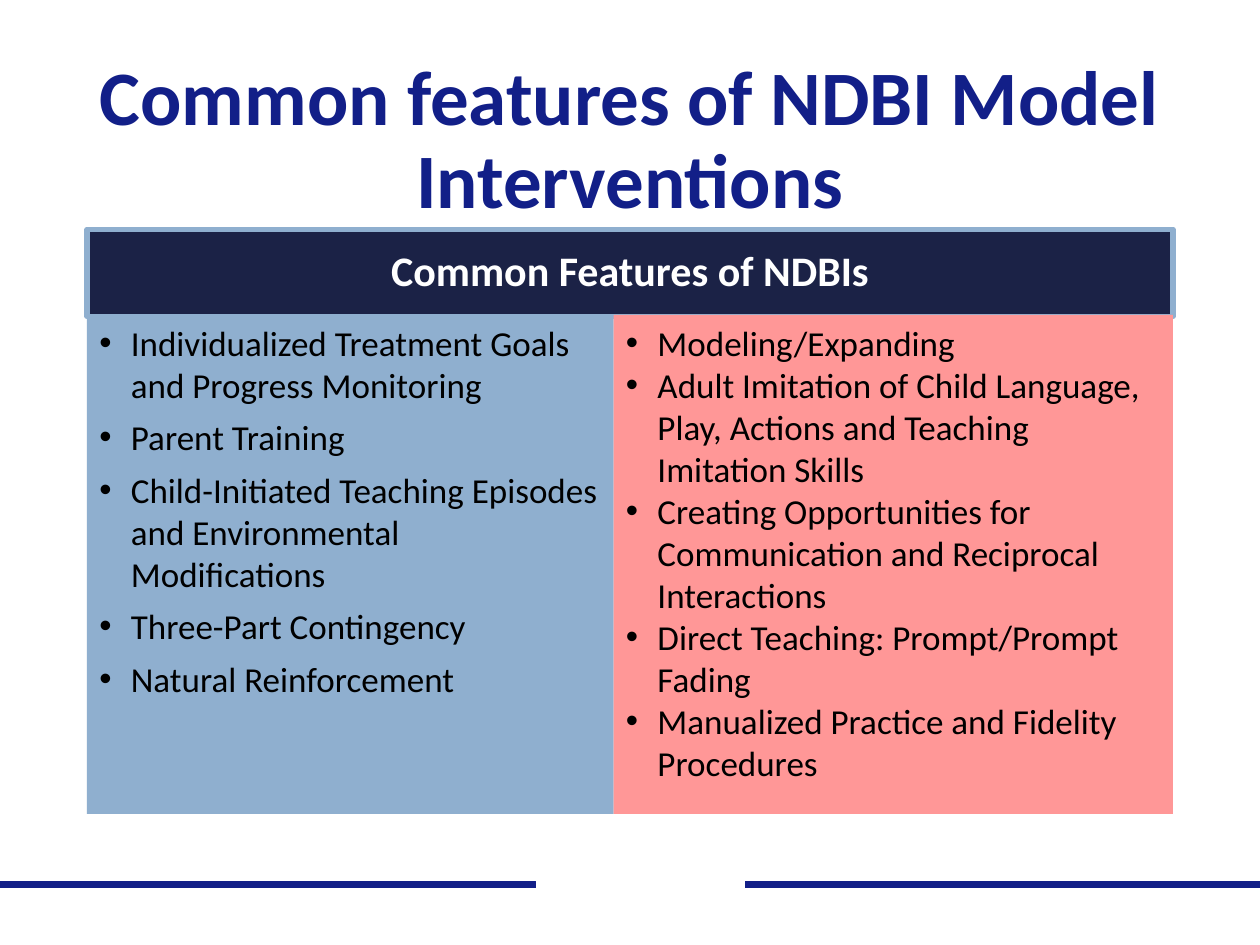
import pptx
import pptx.dml.color
import pptx.enum.shapes
import pptx.enum.text
import pptx.oxml
import pptx.oxml.ns
import pptx.util
from lxml import etree

Pt = pptx.util.Pt
RGBColor = pptx.dml.color.RGBColor
PP_ALIGN = pptx.enum.text.PP_ALIGN
MSO_ANCHOR = pptx.enum.text.MSO_ANCHOR
qn = pptx.oxml.ns.qn

ROYAL = RGBColor(0x12, 0x1F, 0x88)
NAVY = RGBColor(0x1B, 0x22, 0x46)
BLUE = RGBColor(0x8F, 0xAF, 0xCF)
PINK = RGBColor(0xFF, 0x97, 0x97)
WHITE = RGBColor(0xFF, 0xFF, 0xFF)
BLACK = RGBColor(0, 0, 0)
FONT = "Calibri"

PAGE_WIDTH, PAGE_HEIGHT = 720, 540
LEFT, WIDTH = 49.68, 620.64
PANEL_TOP, PANEL_HEIGHT = 180, 285.12
LEFT_PANEL_WIDTH = 300.96

LEFT_FEATURES = [
    "Individualized Treatment Goals and Progress Monitoring",
    "Parent Training",
    "Child-Initiated Teaching Episodes and Environmental Modifications",
    "Three-Part Contingency",
    "Natural Reinforcement",
]
RIGHT_FEATURES = [
    "Modeling/Expanding",
    "Adult Imitation of Child Language, Play, Actions and Teaching Imitation Skills",
    "Creating Opportunities for Communication and Reciprocal Interactions",
    "Direct Teaching: Prompt/Prompt Fading",
    "Manualized Practice and Fidelity Procedures",
]


def style_font(font, size, color, bold=False):
    font.name = FONT
    font.size = Pt(size)
    font.bold = bold
    font.color.rgb = color


def set_heading(frame, text, size, color):
    frame.text = text
    frame.word_wrap = True
    frame.auto_size = pptx.enum.text.MSO_AUTO_SIZE.NONE
    frame.vertical_anchor = MSO_ANCHOR.MIDDLE
    para = frame.paragraphs[0]
    para.alignment = PP_ALIGN.CENTER
    para.line_spacing = 0.9
    style_font(para.runs[0].font, size, color, bold=True)


def add_rectangle(page, box, fill):
    shape = page.shapes.add_shape(
        pptx.enum.shapes.MSO_SHAPE.RECTANGLE, *[Pt(length) for length in box])
    shape.shadow.inherit = False
    shape.fill.solid()
    shape.fill.fore_color.rgb = fill
    shape.line.fill.background()
    return shape


def add_footer_rule(page, left, right, top, color):
    rule = page.shapes.add_connector(
        pptx.enum.shapes.MSO_CONNECTOR.STRAIGHT,
        Pt(left), Pt(top), Pt(right), Pt(top))
    rule.line.color.rgb = color
    rule.line.width = Pt(4.5)
    etree.SubElement(rule._element.spPr, qn("a:effectLst"))


def place_title(page, box):
    title = page.shapes.title
    title.left, title.top, title.width, title.height = [Pt(length) for length in box]
    set_heading(title.text_frame, "Common features of NDBI Model Interventions", 44, ROYAL)


def add_header(page, box):
    header = add_rectangle(page, box, NAVY)
    header.line.color.rgb = BLUE
    header.line.width = Pt(3)
    set_heading(header.text_frame, "Common Features of NDBIs", 24, WHITE)


def add_feature_panel(page, box, fill, features, gap):
    frame = add_rectangle(page, box, fill).text_frame
    frame.word_wrap = True
    frame.vertical_anchor = MSO_ANCHOR.TOP
    for index, feature in enumerate(features):
        para = frame.add_paragraph() if index else frame.paragraphs[0]
        para.text = feature
        para.alignment = PP_ALIGN.LEFT
        para.space_before = Pt(gap if index else 0)
        # Hanging bullet
        properties = para._p.get_or_add_pPr()
        properties.set("marL", str(Pt(18)))
        properties.set("indent", str(-Pt(18)))
        etree.SubElement(properties, qn("a:buFont")).set("typeface", "Arial")
        etree.SubElement(properties, qn("a:buChar")).set("char", "•")
        style_font(para.runs[0].font, 20, BLACK)


def main():
    deck = pptx.Presentation()
    deck.slide_width, deck.slide_height = Pt(PAGE_WIDTH), Pt(PAGE_HEIGHT)
    page = deck.slides.add_slide(deck.slide_layouts[5])

    # Footer rule with a white gap
    add_footer_rule(page, 0, PAGE_WIDTH, 505.44, ROYAL)
    add_footer_rule(page, 306, 425.52, 505.44, WHITE)

    place_title(page, (LEFT, 28.8, WIDTH, 104.4))

    # Feature panels under a shared header
    add_feature_panel(page, (LEFT, PANEL_TOP, LEFT_PANEL_WIDTH, PANEL_HEIGHT),
                      BLUE, LEFT_FEATURES, 6)
    add_header(page, (LEFT, 131.04, WIDTH, 49.68))
    add_feature_panel(page, (LEFT + LEFT_PANEL_WIDTH, PANEL_TOP,
                             WIDTH - LEFT_PANEL_WIDTH, PANEL_HEIGHT),
                      PINK, RIGHT_FEATURES, 0)

    deck.save("out.pptx")


if __name__ == "__main__":
    main()
